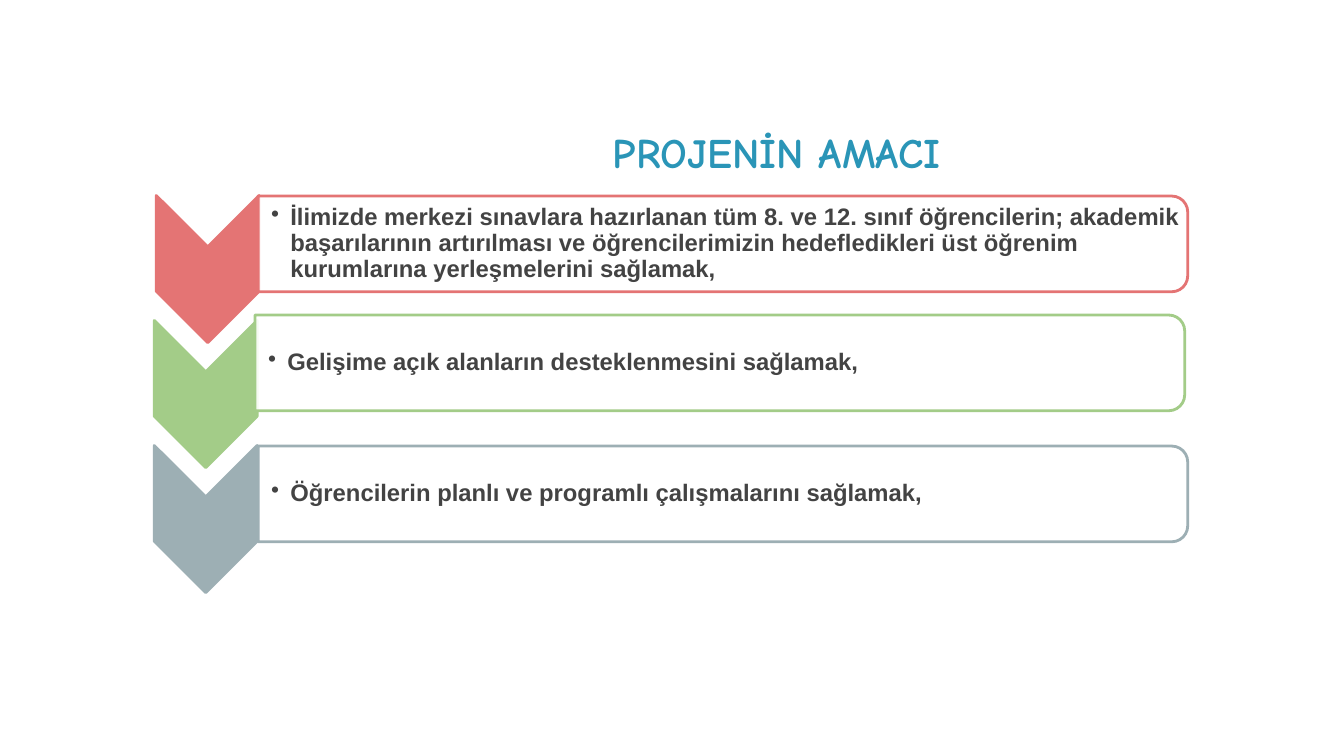
from lxml import etree
from pptx import Presentation
from pptx.dml.color import RGBColor
from pptx.enum.shapes import MSO_SHAPE
from pptx.enum.text import MSO_ANCHOR
from pptx.oxml.ns import qn
from pptx.util import Inches, Pt

CHEVRON = MSO_SHAPE.CHEVRON
ROUND_BAR = MSO_SHAPE.ROUND_2_SAME_RECTANGLE
MIDDLE = MSO_ANCHOR.MIDDLE
COLORS = {"title": "2A95B7", "text": "434343", "white": "FFFFFF",
          "red": "E47474", "green": "A3CC88", "gray": "9DAFB4"}
FIRST_CHEVRON_Y, CHEVRON_PITCH = 2.67, 1.24
GOALS = [
    ("red", 2.06, 7.17, 2.42,
     "İlimizde merkezi sınavlara hazırlanan tüm 8. ve 12. sınıf öğrencilerin; "
     "akademik başarılarının artırılması ve öğrencilerimizin hedefledikleri "
     "üst öğrenim kurumlarına yerleşmelerini sağlamak,"),
    ("green", 2.04, 7.14, 3.6, "Gelişime açık alanların desteklenmesini sağlamak,"),
    ("gray", 2.04, 7.17, 4.9, "Öğrencilerin planlı ve programlı çalışmalarını sağlamak,"),
]


def rgb(name):
    """Return the named colour."""
    return RGBColor.from_string(COLORS[name])


def add_turned_shape(slide, kind, cx, cy, w, h, fill, line):
    """Add a preset shape centred on a point and turned by 90 degrees."""
    sp = slide.shapes.add_shape(kind, Inches(cx - w / 2), Inches(cy - h / 2),
                                Inches(w), Inches(h))
    sp.rotation = 90
    sp.shadow.inherit = False
    sp.fill.solid()
    sp.fill.fore_color.rgb = rgb(fill)
    sp.line.color.rgb = rgb(line)
    sp.line.width = Pt(2)
    etree.SubElement(sp.line._ln, qn("a:round"))
    return sp


def set_alpha(sp, percent):
    """Set the opacity of a solid fill."""
    color = sp._element.spPr.find(qn("a:solidFill"))[0]
    etree.SubElement(color, qn("a:alpha"), val=str(percent * 1000))


def add_text(slide, text, box, insets, font, size, color):
    """Add a wrapped bold text box and return its frame and paragraph."""
    tf = slide.shapes.add_textbox(*map(Inches, box)).text_frame
    tf.word_wrap = True
    tf.margin_left, tf.margin_top, tf.margin_right, tf.margin_bottom = map(Inches, insets)
    p = tf.paragraphs[0]
    p.text = text
    r = p.runs[0]
    r.font.name, r.font.size, r.font.bold = font, Pt(size), True
    r.font.color.rgb = rgb(color)
    return tf, p


def add_bullet(p, indent):
    """Give a paragraph a hanging round bullet."""
    pPr = p._p.get_or_add_pPr()
    pPr.set("marL", str(Inches(indent)))
    pPr.set("indent", str(-Inches(indent)))
    etree.SubElement(pPr, qn("a:buChar"), char="•")


def add_goal(slide, color, chevron_x, chevron_y, bar_x, bar_y, text):
    """Add one chevron with its bar and bulleted text."""
    add_turned_shape(slide, CHEVRON, chevron_x, chevron_y, 1.46, 1.02, color, color)
    bar = add_turned_shape(slide, ROUND_BAR, bar_x, bar_y, 0.95, 9.22, "white", color)
    set_alpha(bar, 90)
    box = (bar_x - 4.61, bar_y - 0.43, 9.17, 0.86)
    tf, p = add_text(slide, text, box, (0.13, 0.01, 0.01, 0.01), "Arial", 17, "text")
    tf.vertical_anchor = MIDDLE
    add_bullet(p, 0.19)
    p.line_spacing = 0.9


def main():
    """Build the slide and save it."""
    prs = Presentation()
    prs.slide_width, prs.slide_height = Inches(13.33), Inches(7.5)
    slide = prs.slides.add_slide(prs.slide_layouts[6])
    add_text(slide, "PROJENİN AMACI", (1.53, 1.16, 10.24, 1.09),
             (4.55, 0.1, 0.1, 0.1), "Comic Neue", 30, "title")
    for i, (color, chevron_x, bar_x, bar_y, text) in enumerate(GOALS):
        chevron_y = FIRST_CHEVRON_Y + i * CHEVRON_PITCH
        add_goal(slide, color, chevron_x, chevron_y, bar_x, bar_y, text)
    prs.save("out.pptx")


if __name__ == "__main__":
    main()
